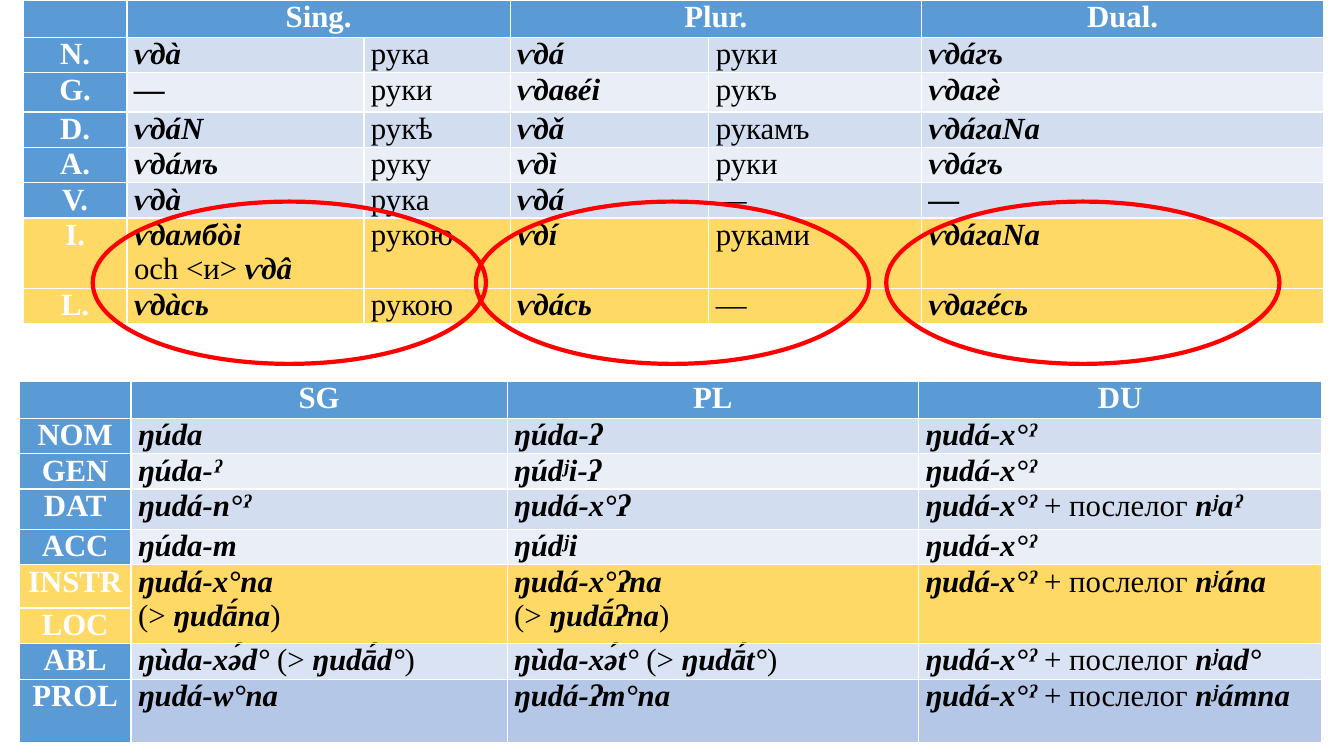
"""Build a slide comparing two declension tables, with the key case forms circled."""
from dataclasses import dataclass

from pptx import Presentation
from pptx.dml.color import RGBColor
from pptx.enum.shapes import MSO_SHAPE
from pptx.enum.text import PP_ALIGN
from pptx.util import Inches, Pt

OVAL = MSO_SHAPE.OVAL
CENTER, LEFT = PP_ALIGN.CENTER, PP_ALIGN.LEFT
BLANK_LAYOUT = 6


@dataclass(frozen=True)
class Theme:
    font: str = "Times New Roman"
    size: int = 22
    white: str = "FFFFFF"
    black: str = "000000"
    blue: str = "5B9BD5"
    dark_band: str = "D2DEEF"
    light_band: str = "EAEFF7"
    gold: str = "FFD966"
    ablative: str = "DAE3F3"
    prolative: str = "B4C7E7"
    red: str = "FF0000"
    ring_width: int = 3


theme = Theme()


def fill_cell(cell, text, color, heading):
    """Fill a cell; asterisks enclose bold italic forms, headings are bold white."""
    cell.fill.solid()
    cell.fill.fore_color.rgb = RGBColor.from_string(color)
    cell.margin_left = cell.margin_right = Inches(0.07)
    cell.margin_top = cell.margin_bottom = 0
    cell.text_frame.text = text.replace("*", "")
    for paragraph, line in zip(cell.text_frame.paragraphs, text.split("\n")):
        paragraph.alignment = CENTER if heading else LEFT
        paragraph.font.size = Pt(theme.size)
        paragraph.clear()
        for position, part in enumerate(line.split("*")):
            if not part:
                continue
            is_form = position % 2 == 1
            run = paragraph.add_run()
            run.text = part
            run.font.name = theme.font
            run.font.size = Pt(theme.size)
            run.font.bold = heading or is_form
            run.font.italic = is_form
            run.font.color.rgb = RGBColor.from_string(theme.white if heading else theme.black)


def add_declension(slide, left, top, widths, heights, rows, merges):
    """Add one table whose rows are (heading fill, body fill, cell texts)."""
    frame = slide.shapes.add_table(len(rows), len(widths), Inches(left), Inches(top),
                                   Inches(sum(widths)), Inches(sum(heights)))
    table = frame.table
    table.horz_banding = False
    table.first_col = True
    for column, width in zip(table.columns, widths):
        column.width = Inches(width)
    for row, height in zip(table.rows, heights):
        row.height = Inches(height)
    for row_index, (heading_fill, body_fill, texts) in enumerate(rows):
        for column_index, text in enumerate(texts):
            heading = row_index == 0 or column_index == 0
            fill_cell(table.cell(row_index, column_index), text,
                      heading_fill if heading else body_fill, heading)
    for first, last in merges:
        table.cell(*first).merge(table.cell(*last))


presentation = Presentation()
presentation.slide_width = Inches(13.33)
presentation.slide_height = Inches(7.5)
slide = presentation.slides.add_slide(presentation.slide_layouts[BLANK_LAYOUT])

header = (theme.blue, theme.blue)
dark = (theme.blue, theme.dark_band)
light = (theme.blue, theme.light_band)
gold = (theme.gold, theme.gold)

historical_rows = [
    (*header, ["", "Sing.", "", "Plur.", "", "Dual."]),
    (*dark, ["N.", "*ѵдà*", "рука", "*ѵдá*", "руки", "*ѵдáгъ*"]),
    (*light, ["G.", "*—*", "руки", "*ѵдавéi*", "рукъ", "*ѵдагè*"]),
    (*dark, ["D.", "*ѵдáN*", "рукѣ", "*ѵдǎ*", "рукамъ", "*ѵдáгаNа*"]),
    (*light, ["A.", "*ѵдáмъ*", "руку", "*ѵдì*", "руки", "*ѵдáгъ*"]),
    (*dark, ["V.", "*ѵдà*", "рука", "*ѵдá*", "—", "*—*"]),
    (*gold, ["I.", "*ѵдамбòi*\noch <и>* ѵдâ*", "рукою", "*ѵдí*", "руками", "*ѵдáгаNа*"]),
    (*gold, ["L.", "*ѵдàсь*", "рукою", "*ѵдáсь*", "—", "*ѵдагéсь*"]),
]
add_declension(slide, 0.23, 0, [1.03, 2.35, 1.45, 1.97, 2.11, 3.99],
               [0.35, 0.35, 0.39, 0.35, 0.35, 0.35, 0.7, 0.35], historical_rows,
               [((0, column), (0, column + 1)) for column in (1, 3)])

modern_rows = [
    (*header, ["", "SG", "PL", "DU"]),
    (*dark, ["NOM", "*ŋúda*", "*ŋúda-ʔ*", "*ŋudá-x°ˀ*"]),
    (*light, ["GEN", "*ŋúda-ˀ*", "*ŋúdʲi-ʔ*", "*ŋudá-x°ˀ*"]),
    (*dark, ["DAT", "*ŋudá-n°ˀ*", "*ŋudá-x°ʔ*", "*ŋudá-x°ˀ *+ послелог *nʲaˀ*"]),
    (*light, ["ACC", "*ŋúda-m*", "*ŋúdʲi*", "*ŋudá-x°ˀ*"]),
    (*gold, ["INSTR", "*ŋudá-x°na*\n(>* ŋudā́na*)", "*ŋudá-x°ʔna*\n(> *ŋudā́ʔna*)",
             "*ŋudá-x°ˀ *+ послелог *nʲána*"]),
    (*gold, ["LOC", "", "", ""]),
    (theme.blue, theme.ablative, ["ABL", "*ŋùda-xə́d° *(>* ŋudā́d°*)",
                                  "*ŋùda-xə́t° *(> *ŋudā́t°*)",
                                  "*ŋudá-x°ˀ *+ послелог *nʲad°*"]),
    (theme.blue, theme.prolative, ["PROL", "*ŋudá-w°na*", "*ŋudá-ʔm°na*",
                                   "*ŋudá-x°ˀ *+ послелог *nʲámna*"]),
]
add_declension(slide, 0.19, 3.78, [1.11, 3.73, 4.08, 4],
               [0.33, 0.35, 0.35, 0.4, 0.35, 0.43, 0.35, 0.36, 0.63], modern_rows,
               [((5, column), (6, column)) for column in (1, 2, 3)])

for ring_left in (4.72, 0.92, 8.79):
    ring = slide.shapes.add_shape(OVAL, Inches(ring_left), Inches(2), Inches(3.9), Inches(1.61))
    ring.shadow.inherit = False
    ring.fill.background()
    ring.line.color.rgb = RGBColor.from_string(theme.red)
    ring.line.width = Pt(theme.ring_width)

presentation.save("out.pptx")
